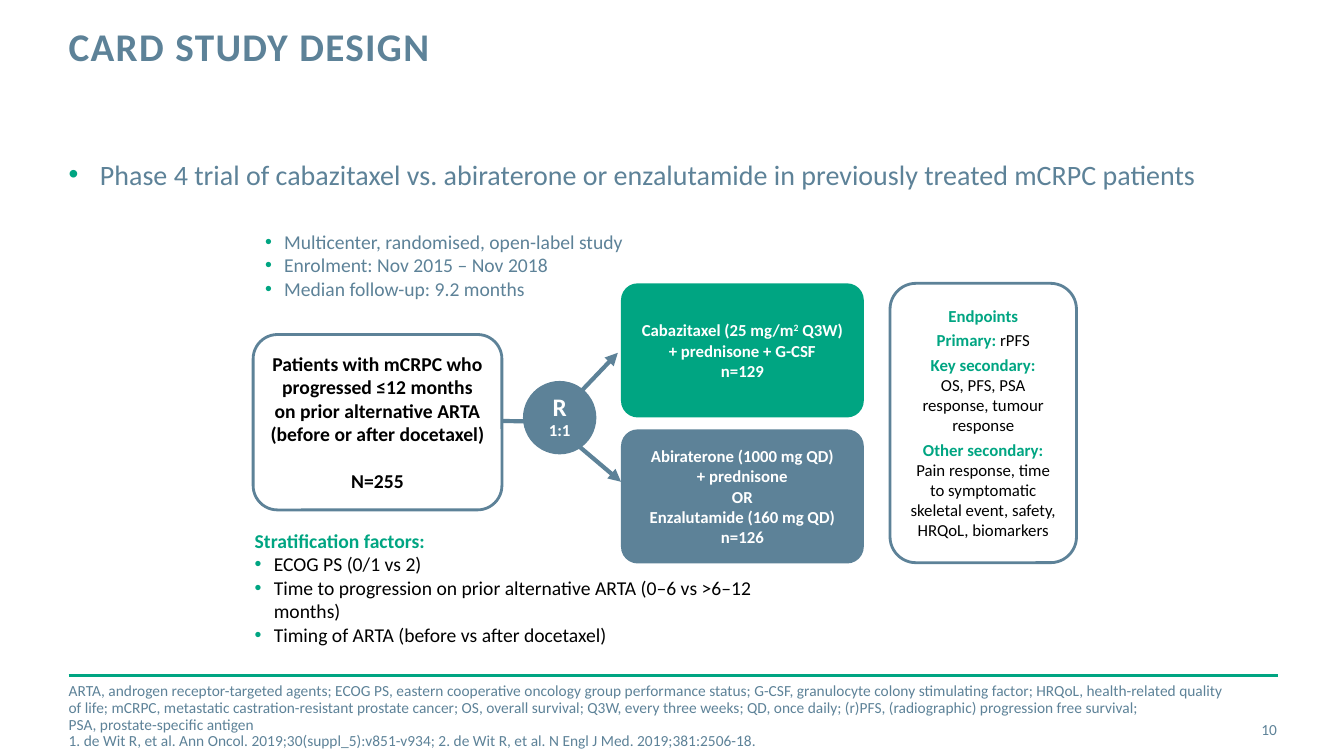
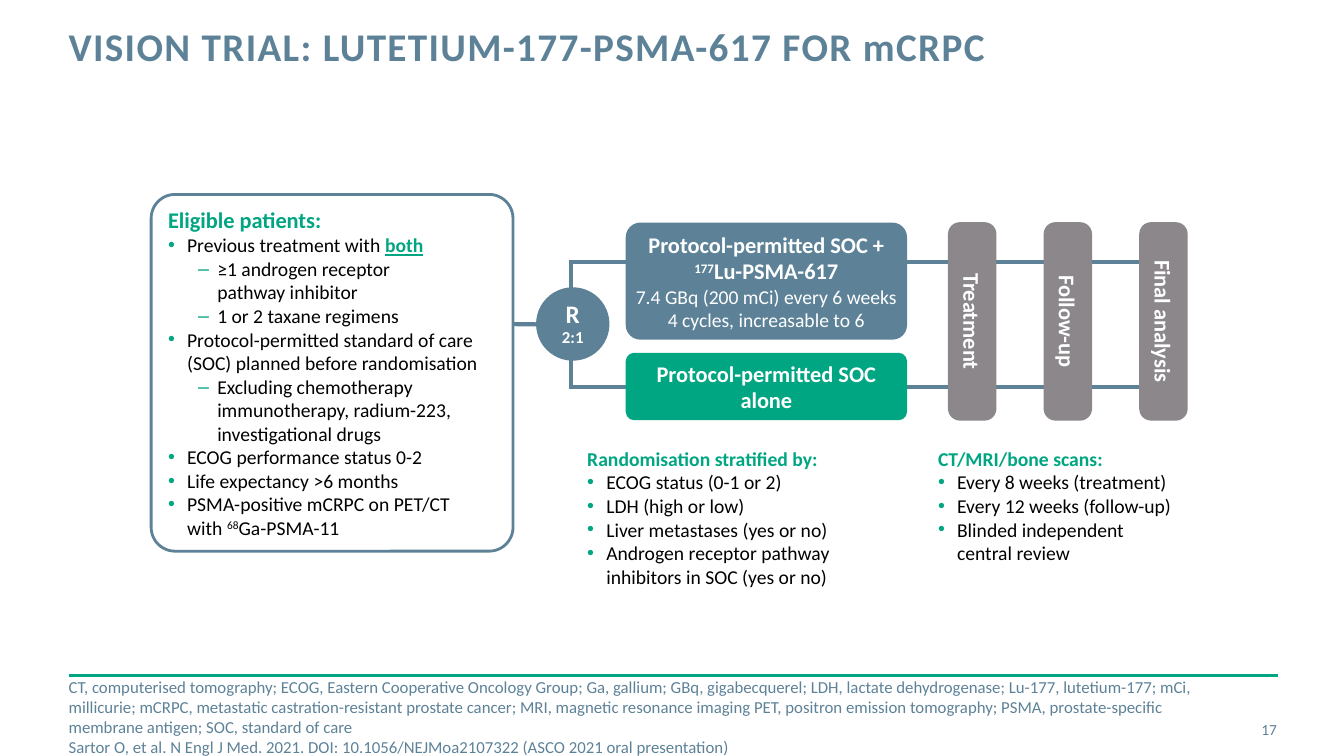
import copy

import lxml.etree
import pptx
import pptx.dml.color
import pptx.enum.shapes
import pptx.enum.text
import pptx.oxml.ns
import pptx.util

Cm = pptx.util.Cm
Pt = pptx.util.Pt
RGBColor = pptx.dml.color.RGBColor
SHAPE = pptx.enum.shapes.MSO_SHAPE
ALIGN = pptx.enum.text.PP_ALIGN
ANCHOR = pptx.enum.text.MSO_ANCHOR
qn = pptx.oxml.ns.qn

GREEN = RGBColor(0x00, 0xA5, 0x82)
SLATE = RGBColor(0x5D, 0x82, 0x98)
GRAY = RGBColor(0x8B, 0x87, 0x8B)
WHITE = RGBColor(0xFF, 0xFF, 0xFF)
BLACK = RGBColor(0x00, 0x00, 0x00)

HEAD = dict(color=GREEN, bold=True)
PLAIN = dict(color=BLACK, bold=False)
PADDED = (0.25, 0.13)
NARROW = (0, 0.13)


def sub(parent, tag, **attrs):
    return lxml.etree.SubElement(parent, qn(tag), attrs)


def add_text(p, text, size=14, color=BLACK, bold=False, underline=False,
             baseline=0, spacing=0):
    for i, line in enumerate(text.split("\n")):
        if i:
            p.add_line_break()
            p._p[-1].append(copy.deepcopy(r._r.rPr))
        if i and not line:
            continue
        r = p.add_run()
        r.text = line
        r.font.name = "Calibri"
        r.font.size = Pt(size)
        r.font.color.rgb = color
        r.font.bold = bold
        if underline:
            r.font.underline = True
        if baseline:
            r._r.rPr.set("baseline", str(baseline * 1000))
        if spacing:
            r._r.rPr.set("spc", str(spacing * 100))


def para(*runs, **layout):
    return runs, layout


def bullet(*runs, char="•", indent=0.48, hang=0.48):
    return para(*runs, bullet=(char, indent, hang))


def dash(*runs):
    return bullet(*runs, char="–", indent=1.24)


class Deck:
    def __init__(self):
        self.prs = pptx.Presentation()
        self.prs.slide_width = Cm(33.87)
        self.prs.slide_height = Cm(19.05)
        self.s = None

    def new_slide(self, title, number, notes, **note_style):
        self.s = self.prs.slides.add_slide(self.prs.slide_layouts[6])
        self.line(1.73, 17.02, 32.21, 17.02, color=GREEN, width=2)
        self.text((1.73, 0.69, 24.28, 2.24), [para(title)], margins=(0, 0),
                  line_spacing=Pt(30), size=28, color=SLATE, bold=True, spacing=1)
        self.text((30, 17.86, 2.18, 1.02), [para(str(number))], margins=(0, 0),
                  anchor=ANCHOR.MIDDLE, align=ALIGN.RIGHT, size=11, color=SLATE)
        self.text((1.73, 17.55, 29.5, 1.02), [para(n) for n in notes], margins=(0, 0),
                  anchor=ANCHOR.MIDDLE, color=SLATE, **note_style)

    def line(self, x1, y1, x2, y2, color=SLATE, width=3, arrow=False):
        sp = self.s.shapes.add_connector(
            pptx.enum.shapes.MSO_CONNECTOR.STRAIGHT, Cm(x1), Cm(y1), Cm(x2), Cm(y2))
        sp.line.color.rgb = color
        sp.line.width = Pt(width)
        if arrow:
            sub(sp.line._get_or_add_ln(), "a:tailEnd", type="triangle")
        sub(sp._element.spPr, "a:effectLst")

    def fill_text(self, sp, paras, margins=PADDED, anchor=ANCHOR.TOP, align=ALIGN.LEFT,
                  line_spacing=None, space_after=None, **style):
        tf = sp.text_frame
        tf.word_wrap = True
        tf.vertical_anchor = anchor
        tf.margin_left = tf.margin_right = Cm(margins[0])
        tf.margin_top = tf.margin_bottom = Cm(margins[1])
        for i, (runs, layout) in enumerate(paras):
            p = tf.add_paragraph() if i else tf.paragraphs[0]
            p.alignment = align
            p.line_spacing = line_spacing
            p.space_after = space_after
            p.space_before = layout.get("space_before")
            if "bullet" in layout:
                char, indent, hang = layout["bullet"]
                pPr = p._p.get_or_add_pPr()
                pPr.set("marL", str(Cm(indent)))
                pPr.set("indent", str(-Cm(hang)))
                sub(sub(pPr, "a:buClr"), "a:srgbClr", val=str(GREEN))
                sub(pPr, "a:buFont", typeface="Arial")
                sub(pPr, "a:buChar", char=char)
            for run in runs:
                text, extra = (run, {}) if isinstance(run, str) else run
                add_text(p, text, **{**style, **extra})

    def text(self, at, paras, **style):
        self.fill_text(self.s.shapes.add_textbox(*map(Cm, at)), paras, **style)

    def shape(self, kind, at, paras, fill, line=None, corner=None, rotation=0, **style):
        sp = self.s.shapes.add_shape(kind, *map(Cm, at))
        sp.shadow.inherit = False
        sp.fill.solid()
        sp.fill.fore_color.rgb = fill
        if line is None:
            sp.line.fill.background()
        else:
            sp.line.color.rgb = line
            sp.line.width = Pt(2)
        if corner is not None:
            sp.adjustments[0] = corner
        sp.rotation = rotation
        self.fill_text(sp, paras, anchor=ANCHOR.MIDDLE, **style)

    def panel(self, at, paras, corner=0.139, **style):
        self.shape(SHAPE.ROUNDED_RECTANGLE, at, paras, WHITE, SLATE, corner, **style)

    def block(self, at, paras, fill, size, corner=0.125, rotation=0):
        self.shape(SHAPE.ROUNDED_RECTANGLE, at, paras, fill, corner=corner,
                   rotation=rotation, margins=NARROW, align=ALIGN.CENTER,
                   size=size, color=WHITE, bold=True)

    def randomisation(self, x, y, ratio):
        self.shape(SHAPE.OVAL, (x, y, 1.85, 1.85),
                   [para(("R\n", dict(size=18)), ratio)], SLATE, margins=(0, 0),
                   align=ALIGN.CENTER, line_spacing=0.9, size=12, color=WHITE, bold=True)

    def listing(self, at, heading, items, **style):
        self.text(at, [para((heading, HEAD))] + [bullet(t) for t in items], **style)


def card_slide(deck):
    deck.new_slide("CARD STUDY DESIGN", 10, [
        "ARTA, androgen receptor-targeted agents; ECOG PS, eastern cooperative oncology "
        "group performance status; G-CSF, granulocyte colony stimulating factor; HRQoL, "
        "health-related quality of life; mCRPC, metastatic castration-resistant prostate "
        "cancer; OS, overall survival; Q3W, every three weeks; QD, once daily; (r)PFS, "
        "(radiographic) progression free survival;\nPSA, prostate-specific antigen",
        "1. de Wit R, et al. Ann Oncol. 2019;30(suppl_5):v851-v934; "
        "2. de Wit R, et al. N Engl J Med. 2019;381:2506-18."],
        size=11, line_spacing=0.9)
    deck.text((1.73, 3.96, 30.45, 12.57), [bullet(
        "Phase 4 trial of cabazitaxel vs. abiraterone or enzalutamide in previously "
        "treated mCRPC patients", indent=0.79, hang=0.79)],
        margins=(0, 0), size=20, color=SLATE)
    deck.line(10.9, 10.59, 13.59, 10.62, arrow=True)
    deck.panel((6.38, 8.43, 6.27, 4.42), [
        para("Patients with mCRPC who progressed ≤12 months on prior alternative ARTA "
             "(before or after docetaxel)"),
        para("N=255", space_before=Pt(17))], align=ALIGN.CENTER, bold=True)
    deck.listing((6.17, 13.41, 14.61, 2.79), "Stratification factors:", [
        "ECOG PS (0/1 vs 2)",
        "Time to progression on prior alternative ARTA (0–6 vs >6–12 months)",
        "Timing of ARTA (before vs after docetaxel)"], anchor=ANCHOR.MIDDLE)
    deck.text((6.43, 5.61, 9.58, 2.13), [
        bullet("Multicenter, randomised, open-label study"),
        bullet("Enrolment: Nov 2015 – Nov 2018"),
        bullet("Median follow-up: 9.2 months")], anchor=ANCHOR.MIDDLE, color=SLATE)
    deck.line(14.33, 10.19, 15.57, 8.89, arrow=True)
    deck.line(14.3, 11, 15.65, 12.14, arrow=True)
    arms = [
        (GREEN, para("Cabazitaxel (25 mg/m", ("2", dict(baseline=30)),
                     " Q3W)\n+ prednisone + G-CSF\nn=129")),
        (SLATE, para("Abiraterone (1000 mg QD)\n+ prednisone\nOR\n"
                     "Enzalutamide (160 mg QD)\nn=126"))]
    for i, (fill, arm) in enumerate(arms):
        deck.block((15.65, 7.14 + 3.68 * i, 6.12, 3.38), [arm], fill, 12)
    deck.randomisation(13.18, 9.6, "1:1")
    deck.panel((22.43, 7.14, 4.7, 7.04), [
        para("Endpoints"),
        para("Primary: ", ("rPFS", PLAIN)),
        para("Key secondary:\n", ("OS, PFS, PSA response, tumour response", PLAIN)),
        para("Other secondary:\n", ("Pain response, time to symptomatic skeletal event, "
                                    "safety, HRQoL, biomarkers", PLAIN))],
        align=ALIGN.CENTER, space_after=Pt(3), size=12, **HEAD)


def vision_slide(deck):
    deck.new_slide("VISION TRIAL: LUTETIUM-177-PSMA-617 FOR mCRPC", 17, [
        "CT, computerised tomography; ECOG, Eastern Cooperative Oncology Group; Ga, gallium; "
        "GBq, gigabecquerel; LDH, lactate dehydrogenase; Lu-177, lutetium-177; mCi, "
        "millicurie; mCRPC, metastatic castration-resistant prostate cancer; MRI, magnetic "
        "resonance imaging PET, positron emission tomography; PSMA, prostate-specific "
        "membrane antigen; SOC, standard of care",
        "Sartor O, et al. N Engl J Med. 2021. DOI: 10.1056/NEJMoa2107322 "
        "(ASCO 2021 oral presentation)"], size=12)
    deck.line(11.4, 8.15, 14.1, 8.18)
    deck.panel((3.81, 4.9, 9.12, 8.99), [
        para(("Eligible patients:", dict(HEAD, size=16))),
        bullet("Previous treatment with ", ("both", dict(HEAD, underline=True))),
        dash("≥1 androgen receptor\npathway inhibitor"),
        dash("1 or 2 taxane regimens"),
        bullet("Protocol-permitted standard of care\n(SOC) planned before randomisation"),
        dash("Excluding chemotherapy\nimmunotherapy, radium-223,\ninvestigational drugs"),
        bullet("ECOG performance status 0-2"),
        bullet("Life expectancy >6 months"),
        bullet("PSMA-positive mCRPC on PET/CT\nwith ", ("68", dict(baseline=30)),
               "Ga-PSMA-11")], corner=0.067)
    deck.listing((14.55, 11.13, 6.99, 3.84), "Randomisation stratified by:", [
        "ECOG status (0-1 or 2)",
        "LDH (high or low)",
        "Liver metastases (yes or no)",
        "Androgen receptor pathway\ninhibitors in SOC (yes or no)"])
    deck.listing((23.39, 11.13, 6.99, 3.25), "CT/MRI/bone scans:", [
        "Every 8 weeks (treatment)",
        "Every 12 weeks (follow-up)",
        "Blinded independent\ncentral review"])
    for y in (6.6, 9.75):
        deck.line(14.33, y, 29.72, y)
    deck.line(14.38, 9.78, 14.38, 6.58)
    length, thickness = 5, 1.22
    for i, phase in enumerate(("Treatment", "Follow-up", "Final analysis")):
        center = 24.5 + 2.41 * i
        deck.block((center - length / 2, 8.1 - thickness / 2, length, thickness),
                   [para(phase)], GRAY, 16, corner=0.244, rotation=90)
    deck.block((15.77, 8.89, 7.09, 1.7), [para("Protocol-permitted SOC\nalone")], GREEN, 16)
    deck.block((15.77, 5.61, 7.09, 2.95), [
        para("Protocol-permitted SOC +\n", ("177", dict(baseline=30)), "Lu-PSMA-617"),
        para(("7.4 GBq (200 mCi) every 6 weeks\n4 cycles, increasable to 6",
              dict(size=14, bold=False)))], SLATE, 16)
    deck.randomisation(13.51, 7.24, "2:1")


def main():
    deck = Deck()
    card_slide(deck)
    vision_slide(deck)
    deck.prs.save("out.pptx")


if __name__ == "__main__":
    main()
